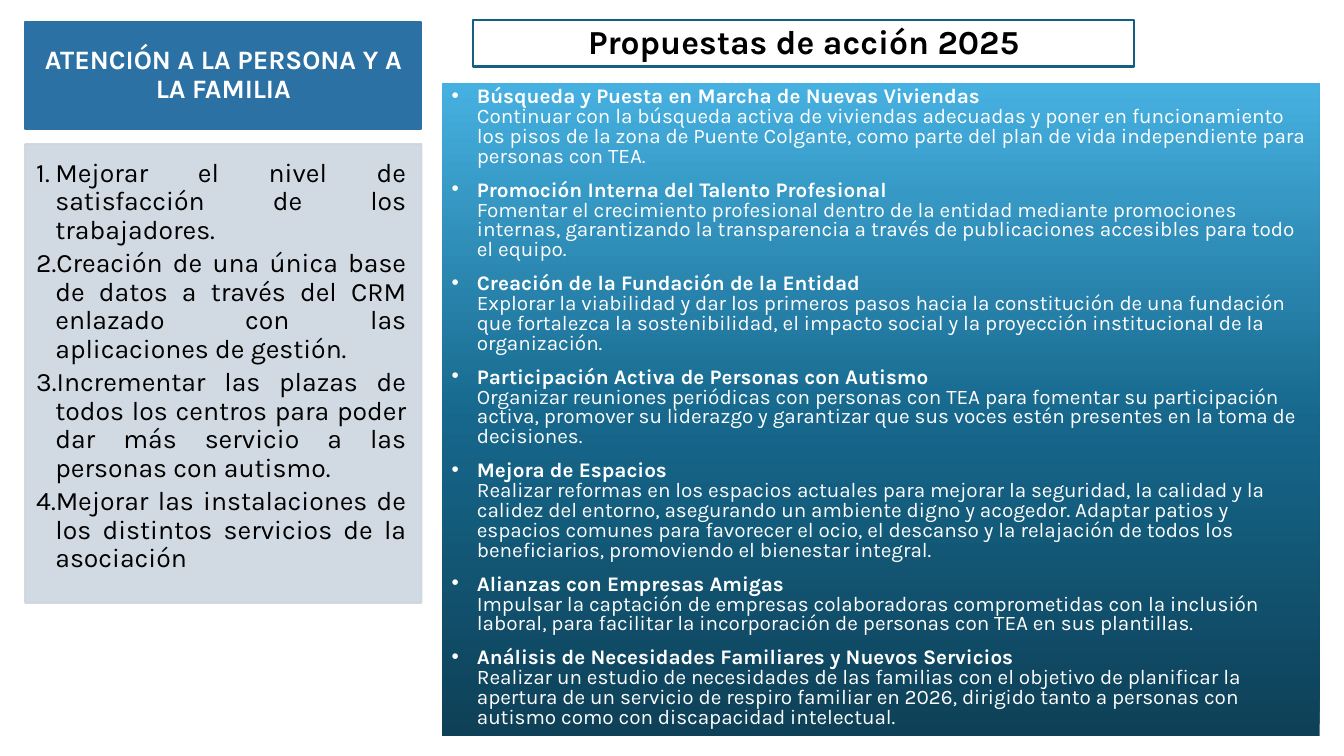
from copy import deepcopy

from lxml.etree import SubElement
from pptx import Presentation
from pptx.dml.color import RGBColor
from pptx.enum.shapes import MSO_SHAPE
from pptx.enum.text import MSO_ANCHOR, MSO_AUTO_SIZE, PP_ALIGN
from pptx.oxml.ns import qn
from pptx.util import Inches, Pt

FONT = "Karla"
COLORS = {
    "white": "FFFFFF",
    "black": "000000",
    "outline": "156082",
    "header": "2C71A4",
    "panel": "CDD6E0",
    "deep": "0E4057",
    "middle": "16678B",
    "light": "46B1E1",
}
GOALS = [
    "Mejorar el nivel de satisfacción de los trabajadores.",
    "Creación de una única base de datos a través del CRM enlazado con las aplicaciones de gestión.",
    "Incrementar las plazas de todos los centros para poder dar más servicio a las personas con autismo.",
    "Mejorar las instalaciones de los distintos servicios de la asociación",
]
PROPOSALS = [
    ("Búsqueda y Puesta en Marcha de Nuevas Viviendas",
     "Continuar con la búsqueda activa de viviendas adecuadas y poner en funcionamiento los pisos de la "
     "zona de Puente Colgante, como parte del plan de vida independiente para personas con TEA."),
    ("Promoción Interna del Talento Profesional",
     "Fomentar el crecimiento profesional dentro de la entidad mediante promociones internas, "
     "garantizando la transparencia a través de publicaciones accesibles para todo el equipo."),
    ("Creación de la Fundación de la Entidad",
     "Explorar la viabilidad y dar los primeros pasos hacia la constitución de una fundación que "
     "fortalezca la sostenibilidad, el impacto social y la proyección institucional de la organización."),
    ("Participación Activa de Personas con Autismo",
     "Organizar reuniones periódicas con personas con TEA para fomentar su participación activa, "
     "promover su liderazgo y garantizar que sus voces estén presentes en la toma de decisiones."),
    ("Mejora de Espacios",
     "Realizar reformas en los espacios actuales para mejorar la seguridad, la calidad y la calidez del "
     "entorno, asegurando un ambiente digno y acogedor. Adaptar patios y espacios comunes para favorecer "
     "el ocio, el descanso y la relajación de todos los beneficiarios, promoviendo el bienestar integral."),
    ("Alianzas con Empresas Amigas",
     "Impulsar la captación de empresas colaboradoras comprometidas con la inclusión laboral, para "
     "facilitar la incorporación de personas con TEA en sus plantillas."),
    ("Análisis de Necesidades Familiares y Nuevos Servicios",
     "Realizar un estudio de necesidades de las familias con el objetivo de planificar la apertura de un "
     "servicio de respiro familiar en 2026, dirigido tanto a personas con autismo como con discapacidad "
     "intelectual."),
]


def color(name):
    """Return the named colour."""
    return RGBColor.from_string(COLORS[name])


def place(shape, box):
    """Move a shape to a box given in inches."""
    shape.left, shape.top, shape.width, shape.height = map(Inches, box)


def prepare_frame(shape, anchor, margins):
    """Set wrapping, anchor and margins of a text frame and return it."""
    frame = shape.text_frame
    frame.word_wrap = True
    frame.auto_size = MSO_AUTO_SIZE.NONE
    frame.vertical_anchor = anchor
    frame.margin_left, frame.margin_top, frame.margin_right, frame.margin_bottom = map(Inches, margins)
    return frame


def format_paragraph(paragraph, size, color_name, spacing, alignment, bold=None):
    """Set the font and spacing of a paragraph."""
    paragraph.alignment = alignment
    paragraph.line_spacing = spacing
    paragraph.space_before = Pt(0)
    font = paragraph.font
    font.name, font.size, font.bold = FONT, Pt(size), bold
    font.color.rgb = color(color_name)


def add_marker(paragraph, indent, tag, **attributes):
    """Give a paragraph a hanging indent and a bullet or number."""
    properties = paragraph._p.get_or_add_pPr()
    properties.set("marL", str(Inches(indent)))
    properties.set("indent", str(-Inches(indent)))
    SubElement(properties, qn(tag), attributes)


def list_paragraphs(frame, items):
    """Yield one paragraph of the frame for each item."""
    for index, item in enumerate(items):
        yield (frame.add_paragraph() if index else frame.paragraphs[0]), item


def add_rectangle(slide, box, color_name):
    """Add a rectangle with matching fill and line."""
    shape = slide.shapes.add_shape(MSO_SHAPE.RECTANGLE, *map(Inches, box))
    shape.shadow.inherit = False
    shape.fill.solid()
    shape.fill.fore_color.rgb = color(color_name)
    shape.line.color.rgb = color(color_name)
    shape.line.width = Pt(1.5)
    return shape


def fill_title(title, box):
    """Place the framed slide title."""
    place(title, box)
    title.fill.solid()
    title.fill.fore_color.rgb = color("white")
    title.line.color.rgb = color("outline")
    title.line.width = Pt(1.5)
    frame = prepare_frame(title, MSO_ANCHOR.BOTTOM, (0.1, 0.05, 0.1, 0.05))
    frame.text = "Propuestas de acción 2025"
    format_paragraph(frame.paragraphs[0], 24, "black", 0.8, PP_ALIGN.CENTER, True)


def fill_proposals(body, box):
    """Place the gradient panel with the list of proposals."""
    place(body, box)
    body.fill.gradient()
    body.fill.gradient_angle = 90
    first_stop = body._element.spPr.find(".//" + qn("a:gs"))
    first_stop.addnext(deepcopy(first_stop))
    stops = [("deep", 0), ("middle", 0.48), ("light", 1)]
    for stop, (name, position) in zip(body.fill.gradient_stops, stops):
        stop.color.rgb = color(name)
        stop.position = position
    frame = prepare_frame(body, MSO_ANCHOR.TOP, (0.1, 0.05, 0.1, 0.05))
    for paragraph, (heading, detail) in list_paragraphs(frame, PROPOSALS):
        add_marker(paragraph, 0.25, "a:buChar", char="•")
        format_paragraph(paragraph, 14.8, "white", 0.8, PP_ALIGN.LEFT)
        if heading != PROPOSALS[0][0]:
            paragraph.space_before = Pt(10)
        heading_run = paragraph.add_run()
        heading_run.text = heading
        heading_run.font.bold = True
        paragraph.add_line_break()
        detail_run = paragraph.add_run()
        detail_run.text = detail
        detail_run.font.bold = False


def add_area_header(slide, box):
    """Add the heading of the work area."""
    shape = add_rectangle(slide, box, "header")
    frame = prepare_frame(shape, MSO_ANCHOR.MIDDLE, (0.15, 0.08, 0.15, 0.08))
    frame.text = "ATENCIÓN A LA PERSONA Y A LA FAMILIA"
    format_paragraph(frame.paragraphs[0], 19, "white", 0.9, PP_ALIGN.CENTER, True)


def add_goals(slide, box):
    """Add the translucent panel with the numbered goals."""
    panel = add_rectangle(slide, box, "panel")
    for tint in panel._element.spPr.iter(qn("a:srgbClr")):
        SubElement(tint, qn("a:alpha"), val="90000")
    frame = prepare_frame(panel, MSO_ANCHOR.TOP, (0.11, 0.15, 0.15, 0.17))
    for paragraph, goal in list_paragraphs(frame, GOALS):
        paragraph.text = goal
        add_marker(paragraph, 0.19, "a:buAutoNum", type="arabicPeriod")
        format_paragraph(paragraph, 19, "black", 0.9, PP_ALIGN.JUSTIFY)
        paragraph.space_after = Pt(2.85)


def main():
    """Build and save the presentation."""
    presentation = Presentation()
    presentation.slide_width, presentation.slide_height = Inches(13.33), Inches(7.5)
    slide = presentation.slides.add_slide(presentation.slide_layouts[1])
    fill_title(slide.shapes.title, (4.69, 0.2, 6.56, 0.46))
    fill_proposals(slide.placeholders[1], (4.38, 0.82, 8.71, 6.48))
    add_area_header(slide, (0.25, 0.22, 3.93, 1.06))
    add_goals(slide, (0.25, 1.43, 3.93, 4.55))
    presentation.save("out.pptx")


if __name__ == "__main__":
    main()
